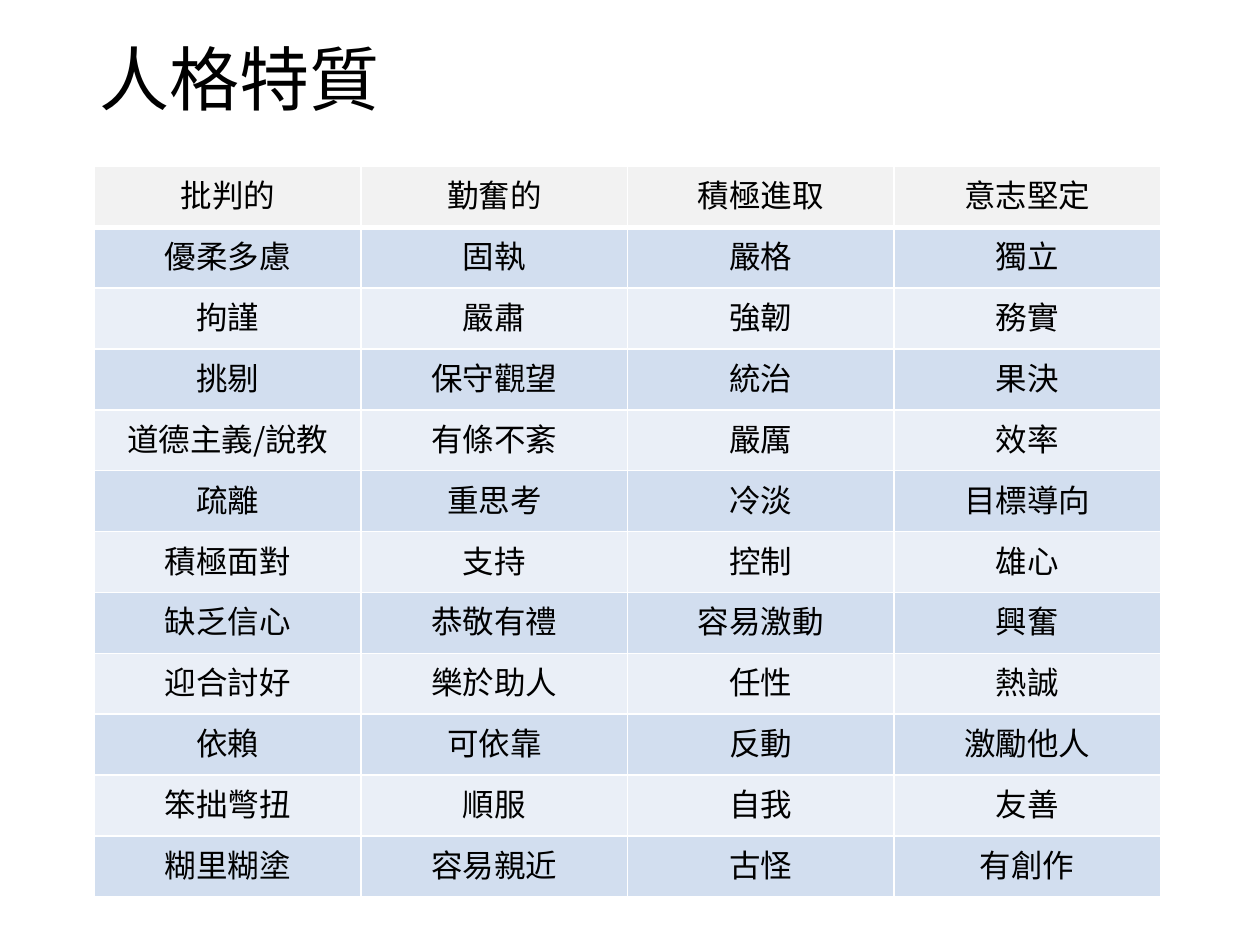
from lxml import etree
from pptx import Presentation
from pptx.dml.color import RGBColor
from pptx.enum.text import MSO_ANCHOR, PP_ALIGN
from pptx.oxml.ns import qn
from pptx.util import Inches, Pt

CENTER = PP_ALIGN.CENTER
MIDDLE = MSO_ANCHOR.MIDDLE
FONT = "Noto Sans CJK SC"
COLORS = {"text": "000000", "head": "F2F2F2", "dark": "D2DEEF",
          "light": "EAEFF7", "line": "FFFFFF"}
TITLE = "人格特質"
TRAITS = [
    ["批判的", "勤奮的", "積極進取", "意志堅定"],
    ["優柔多慮", "固執", "嚴格", "獨立"],
    ["拘謹", "嚴肅", "強韌", "務實"],
    ["挑剔", "保守觀望", "統治", "果決"],
    ["道德主義/說教", "有條不紊", "嚴厲", "效率"],
    ["疏離", "重思考", "冷淡", "目標導向"],
    ["積極面對", "支持", "控制", "雄心"],
    ["缺乏信心", "恭敬有禮", "容易激動", "興奮"],
    ["迎合討好", "樂於助人", "任性", "熱誠"],
    ["依賴", "可依靠", "反動", "激勵他人"],
    ["笨拙彆扭", "順服", "自我", "友善"],
    ["糊里糊塗", "容易親近", "古怪", "有創作"],
]


def style(par, size):
    for run in par.runs:
        run.font.size = Pt(size)
        run.font.name = FONT
        run.font.color.rgb = RGBColor.from_string(COLORS["text"])
        face = etree.SubElement(run.font._element, qn("a:ea"))
        face.set("typeface", FONT)


def edge(cell, base):
    """Draw the cell's four borders; base is the bottom width in points."""
    props = cell._tc.get_or_add_tcPr()
    for side, width in (("L", 1), ("R", 1), ("T", 1), ("B", base)):
        line = etree.SubElement(props, qn("a:ln" + side), w=str(Pt(width)))
        fill = etree.SubElement(line, qn("a:solidFill"))
        etree.SubElement(fill, qn("a:srgbClr"), val=COLORS["line"])


def add_title(slide, box):
    frame = slide.shapes.add_textbox(*box).text_frame
    frame.word_wrap = True
    frame.vertical_anchor = MIDDLE
    frame.text = TITLE
    par = frame.paragraphs[0]
    par.line_spacing = 0.9
    style(par, 40)


def add_traits(slide, box):
    rows, cols = len(TRAITS), len(TRAITS[0])
    table = slide.shapes.add_table(rows, cols, *box).table
    for col in table.columns:
        col.width = box[2] // cols
    for r, names in enumerate(TRAITS):
        table.rows[r].height = box[3] // rows
        tone = "head" if r == 0 else "dark" if r % 2 else "light"
        for c, name in enumerate(names):
            cell = table.cell(r, c)
            cell.margin_left = cell.margin_right = Inches(0.07)
            cell.margin_top = cell.margin_bottom = Inches(0.04)
            edge(cell, 1 if r else 3)
            cell.fill.solid()
            cell.fill.fore_color.rgb = RGBColor.from_string(COLORS[tone])
            cell.text_frame.text = name
            par = cell.text_frame.paragraphs[0]
            par.alignment = CENTER
            style(par, 18)


def main():
    deck = Presentation()
    deck.slide_width, deck.slide_height = Inches(10), Inches(7.5)
    slide = deck.slides.add_slide(deck.slide_layouts[6])
    add_traits(slide, [Inches(n) for n in (0.75, 1.32, 8.46, 5.8)])
    add_title(slide, [Inches(n) for n in (0.69, 0.4, 8.62, 0.51)])
    deck.save("out.pptx")


if __name__ == "__main__":
    main()
